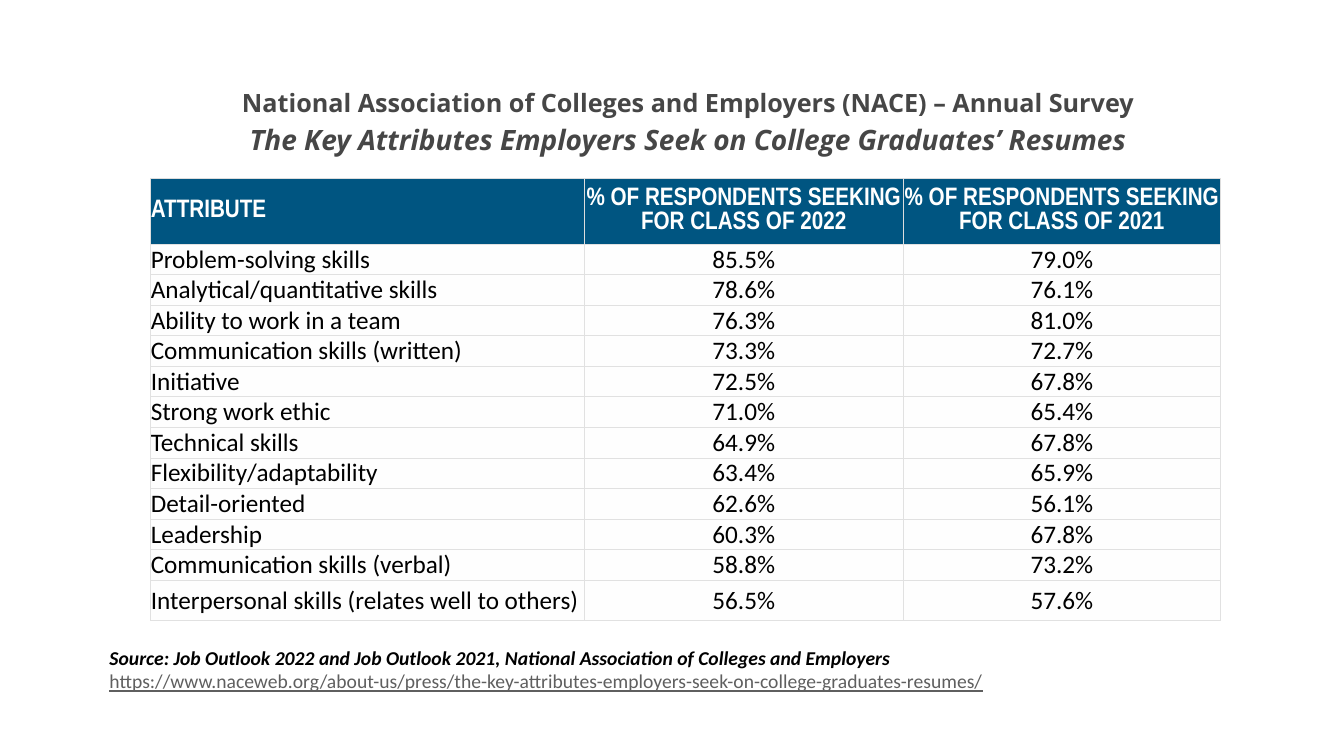
from dataclasses import dataclass

from lxml import etree
from pptx import Presentation
from pptx.dml.color import RGBColor
from pptx.enum.text import MSO_ANCHOR, MSO_AUTO_SIZE, PP_ALIGN
from pptx.oxml.ns import qn
from pptx.util import Cm, Pt

LEFT, CENTER = PP_ALIGN.LEFT, PP_ALIGN.CENTER
TOP, MIDDLE = MSO_ANCHOR.TOP, MSO_ANCHOR.MIDDLE
GROW = MSO_AUTO_SIZE.SHAPE_TO_FIT_TEXT
TITLE_ONLY = 5


@dataclass(frozen=True)
class TextStyle:
    """Font settings for one role of text."""
    name: str
    size: int
    color: str
    bold: bool = False
    italic: bool = False
    underline: bool = False


@dataclass(frozen=True)
class Theme:
    """Colours and type styles of the slide."""
    header_fill: str = "005581"
    body_fill: str = "FEFEFE"
    header_border: str = "DDDDDD"
    body_border: str = "E1E1E1"
    border_width: float = 0.75
    survey: TextStyle = TextStyle("Open Sans", 18, "464646", bold=True)
    headline: TextStyle = TextStyle("Open Sans", 20, "464646", bold=True, italic=True)
    header: TextStyle = TextStyle("Arial Narrow", 18, "FFFFFF", bold=True)
    body: TextStyle = TextStyle("Calibri", 18, "000000")
    source: TextStyle = TextStyle("Calibri", 14, "000000", bold=True, italic=True)
    address: TextStyle = TextStyle("Calibri", 14, "5F5F5F", underline=True)


HEADING = ["National Association of Colleges and Employers (NACE) – Annual Survey",
           "The Key Attributes Employers Seek on College Graduates’ Resumes"]
SOURCE = ["Source: Job Outlook 2022 and Job Outlook 2021, National Association of Colleges and Employers",
          "https://www.naceweb.org/about-us/press/the-key-attributes-employers-seek-on-college-graduates-resumes/"]
COLUMNS = ["ATTRIBUTE",
           "% OF RESPONDENTS SEEKING FOR CLASS OF 2022",
           "% OF RESPONDENTS SEEKING FOR CLASS OF 2021"]
ATTRIBUTES = [
    ("Problem-solving skills", 85.5, 79.0),
    ("Analytical/quantitative skills", 78.6, 76.1),
    ("Ability to work in a team", 76.3, 81.0),
    ("Communication skills (written)", 73.3, 72.7),
    ("Initiative", 72.5, 67.8),
    ("Strong work ethic", 71.0, 65.4),
    ("Technical skills", 64.9, 67.8),
    ("Flexibility/adaptability", 63.4, 65.9),
    ("Detail-oriented", 62.6, 56.1),
    ("Leadership", 60.3, 67.8),
    ("Communication skills (verbal)", 58.8, 73.2),
    ("Interpersonal skills (relates well to others)", 56.5, 57.6),
]


class SurveyPage:
    """Builds the elements of the survey slide in one theme."""

    def __init__(self, deck, theme):
        """Add a title-only page to the deck."""
        self.theme = theme
        self.page = deck.slides.add_slide(deck.slide_layouts[TITLE_ONLY])

    def set_text(self, frame, lines, styles, align):
        """Fill a text frame with one styled paragraph per line."""
        frame.word_wrap = True
        frame.text = "\n".join(lines)
        for para, style in zip(frame.paragraphs, styles):
            para.alignment = align
            for span in para.runs:
                font = span.font
                font.name, font.size = style.name, Pt(style.size)
                font.bold, font.italic = style.bold, style.italic
                font.underline = style.underline
                font.color.rgb = RGBColor.from_string(style.color)

    def title(self, lines, left, top, width, height):
        """Place the two-line heading in the title placeholder."""
        box = self.page.shapes.title
        box.left, box.top, box.width, box.height = Cm(left), Cm(top), Cm(width), Cm(height)
        frame = box.text_frame
        self.set_text(frame, lines, [self.theme.survey, self.theme.headline], CENTER)
        frame.auto_size, frame.vertical_anchor = GROW, TOP
        for para in frame.paragraphs:
            para.line_spacing = 0.9
        frame.paragraphs[0].space_after = Pt(6)

    def source(self, lines, left, top, width, height):
        """Add the source note and its web address."""
        box = self.page.shapes.add_textbox(Cm(left), Cm(top), Cm(width), Cm(height))
        self.set_text(box.text_frame, lines, [self.theme.source, self.theme.address], LEFT)
        box.text_frame.auto_size = GROW

    def border(self, cell, color, bottom):
        """Draw the four edges of a table cell."""
        edges = {"a:lnL": color, "a:lnR": color, "a:lnT": color, "a:lnB": bottom}
        for tag, edge_color in edges.items():
            line = etree.SubElement(cell._tc.get_or_add_tcPr(), qn(tag),
                                    w=str(Pt(self.theme.border_width)))
            fill = etree.SubElement(line, qn("a:solidFill"))
            etree.SubElement(fill, qn("a:srgbClr"), val=edge_color)

    def table(self, rows, left, top, widths, heights):
        """Add the table with a header row and plain body rows."""
        theme = self.theme
        grid = self.page.shapes.add_table(len(rows), len(widths), Cm(left), Cm(top),
                                          Cm(sum(widths)), Cm(sum(heights))).table
        grid.horz_banding = False
        for column, width in zip(grid.columns, widths):
            column.width = Cm(width)
        for row_index, (values, height) in enumerate(zip(rows, heights)):
            grid.rows[row_index].height = Cm(height)
            is_header = row_index == 0
            style = theme.header if is_header else theme.body
            color = theme.header_fill if is_header else theme.body_fill
            edge = theme.header_border if is_header else theme.body_border
            for column_index, value in enumerate(values):
                cell = grid.cell(row_index, column_index)
                cell.margin_left = cell.margin_right = cell.margin_top = cell.margin_bottom = 0
                cell.vertical_anchor = MIDDLE
                self.border(cell, edge, theme.body_border)
                cell.fill.solid()
                cell.fill.fore_color.rgb = RGBColor.from_string(color)
                self.set_text(cell.text_frame, [value], [style], CENTER if column_index else LEFT)


def main():
    """Build and save the slide."""
    deck = Presentation()
    deck.slide_width, deck.slide_height = Cm(33.87), Cm(19.05)
    survey = SurveyPage(deck, Theme())
    survey.title(HEADING, 5.23, 2.16, 24.23, 2.08)
    survey.source(SOURCE, 2.51, 16.15, 31.35, 1.45)
    rows = [COLUMNS] + [(name, f"{recent:.1f}%", f"{earlier:.1f}%")
                        for name, recent, earlier in ATTRIBUTES]
    heights = [1.65] + [0.77] * (len(ATTRIBUTES) - 1) + [1.02]
    survey.table(rows, 3.8, 4.5, [10.92, 8.05, 7.98], heights)
    deck.save("out.pptx")


if __name__ == "__main__":
    main()
